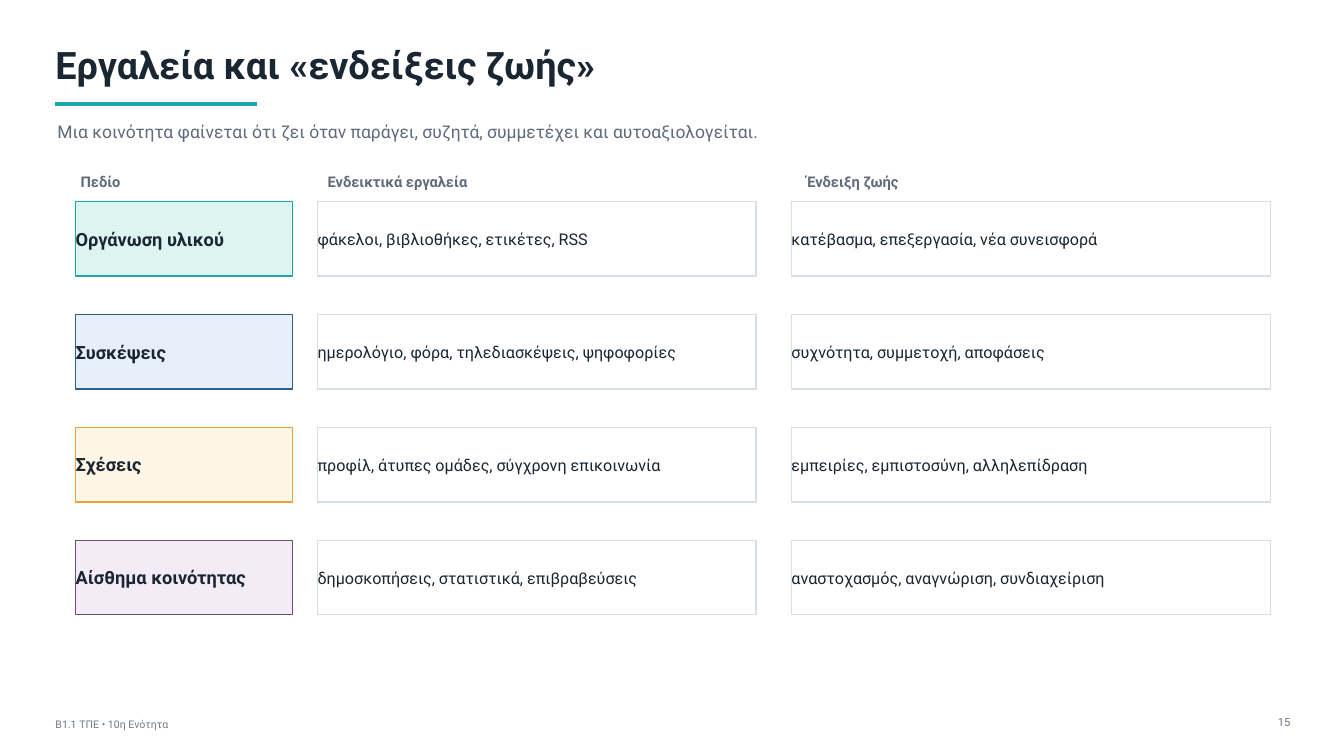
from lxml.etree import SubElement
from pptx import Presentation
from pptx.dml.color import RGBColor
from pptx.enum.shapes import MSO_CONNECTOR, MSO_SHAPE
from pptx.enum.text import MSO_ANCHOR, PP_ALIGN
from pptx.oxml.ns import qn
from pptx.util import Inches, Pt

COLORS = {
    "ink": "1B2633", "muted": "5F6B7A", "footer": "6E7A87",
    "white": "FFFFFF", "border": "D6DEE8",
    "teal": "1EA7A8", "mint": "DDF5F0",
    "blue": "2C5F89", "sky": "E7F0FA",
    "orange": "E7A13D", "cream": "FFF6E6",
    "purple": "6B4E71", "lilac": "F3ECF6",
}

presentation = Presentation()
presentation.slide_width = Inches(13.33)
presentation.slide_height = Inches(7.5)
slide = presentation.slides.add_slide(presentation.slide_layouts[6])


def rgb(name):
    return RGBColor.from_string(COLORS[name])


def write(holder, text, size, color, bold=False, align=PP_ALIGN.LEFT):
    frame = holder.text_frame
    frame.word_wrap = True
    frame.vertical_anchor = MSO_ANCHOR.MIDDLE
    frame.margin_left = frame.margin_right = 0
    frame.margin_top = frame.margin_bottom = 0
    paragraph = frame.paragraphs[0]
    paragraph.text = text
    paragraph.alignment = align
    paragraph.font.name = "Roboto"
    paragraph.font.size = Pt(size)
    paragraph.font.bold = bold
    paragraph.font.color.rgb = rgb(color)


labels = [
    (0.55, 0.36, 9.6, 0.55, "Εργαλεία και «ενδείξεις ζωής»", 27, "ink", True, PP_ALIGN.LEFT),
    (0.57, 1.13, 9.2, 0.34,
     "Μια κοινότητα φαίνεται ότι ζει όταν παράγει, συζητά, συμμετέχει και αυτοαξιολογείται.",
     12.5, "muted", False, PP_ALIGN.LEFT),
    (0.8, 1.68, 2.2, 0.24, "Πεδίο", 10.5, "muted", True, PP_ALIGN.LEFT),
    (3.25, 1.68, 3.5, 0.24, "Ενδεικτικά εργαλεία", 10.5, "muted", True, PP_ALIGN.LEFT),
    (8, 1.68, 3.5, 0.24, "Ένδειξη ζωής", 10.5, "muted", True, PP_ALIGN.LEFT),
    (0.55, 7.08, 5, 0.22, "Β1.1 ΤΠΕ • 10η Ενότητα", 7.5, "footer", False, PP_ALIGN.LEFT),
    (12.35, 7.04, 0.45, 0.25, "15", 8, "footer", False, PP_ALIGN.RIGHT),
]
for left, top, width, height, *style in labels:
    label = slide.shapes.add_textbox(Inches(left), Inches(top), Inches(width), Inches(height))
    write(label, *style)

title_rule = slide.shapes.add_connector(
    MSO_CONNECTOR.STRAIGHT, Inches(0.55), Inches(1.03), Inches(2.55), Inches(1.03))
title_rule.line.color.rgb = rgb("teal")
title_rule.line.width = Pt(3)
SubElement(title_rule._element.spPr, qn("a:effectLst"))

fields = [
    ("mint", "teal", "Οργάνωση υλικού",
     "φάκελοι, βιβλιοθήκες, ετικέτες, RSS",
     "κατέβασμα, επεξεργασία, νέα συνεισφορά"),
    ("sky", "blue", "Συσκέψεις",
     "ημερολόγιο, φόρα, τηλεδιασκέψεις, ψηφοφορίες",
     "συχνότητα, συμμετοχή, αποφάσεις"),
    ("cream", "orange", "Σχέσεις",
     "προφίλ, άτυπες ομάδες, σύγχρονη επικοινωνία",
     "εμπειρίες, εμπιστοσύνη, αλληλεπίδραση"),
    ("lilac", "purple", "Αίσθημα κοινότητας",
     "δημοσκοπήσεις, στατιστικά, επιβραβεύσεις",
     "αναστοχασμός, αναγνώριση, συνδιαχείριση"),
]
columns = [(0.75, 2.15), (3.15, 4.35), (7.85, 4.75)]
ROW_TOP, ROW_STEP, ROW_HEIGHT = 2, 1.12, 0.74

for row, (tint, accent, field, tools, sign) in enumerate(fields):
    cells = [
        (field, 13, True, tint, accent),
        (tools, 11.5, False, "white", "border"),
        (sign, 11.5, False, "white", "border"),
    ]
    for (left, width), (text, size, bold, fill, outline) in zip(columns, cells):
        card = slide.shapes.add_shape(
            MSO_SHAPE.RECTANGLE, Inches(left), Inches(ROW_TOP + row * ROW_STEP),
            Inches(width), Inches(ROW_HEIGHT))
        card.shadow.inherit = False
        card.fill.solid()
        card.fill.fore_color.rgb = rgb(fill)
        card.line.color.rgb = rgb(outline)
        card.line.width = Pt(1)
        write(card, text, size, "ink", bold)

presentation.save("out.pptx")
